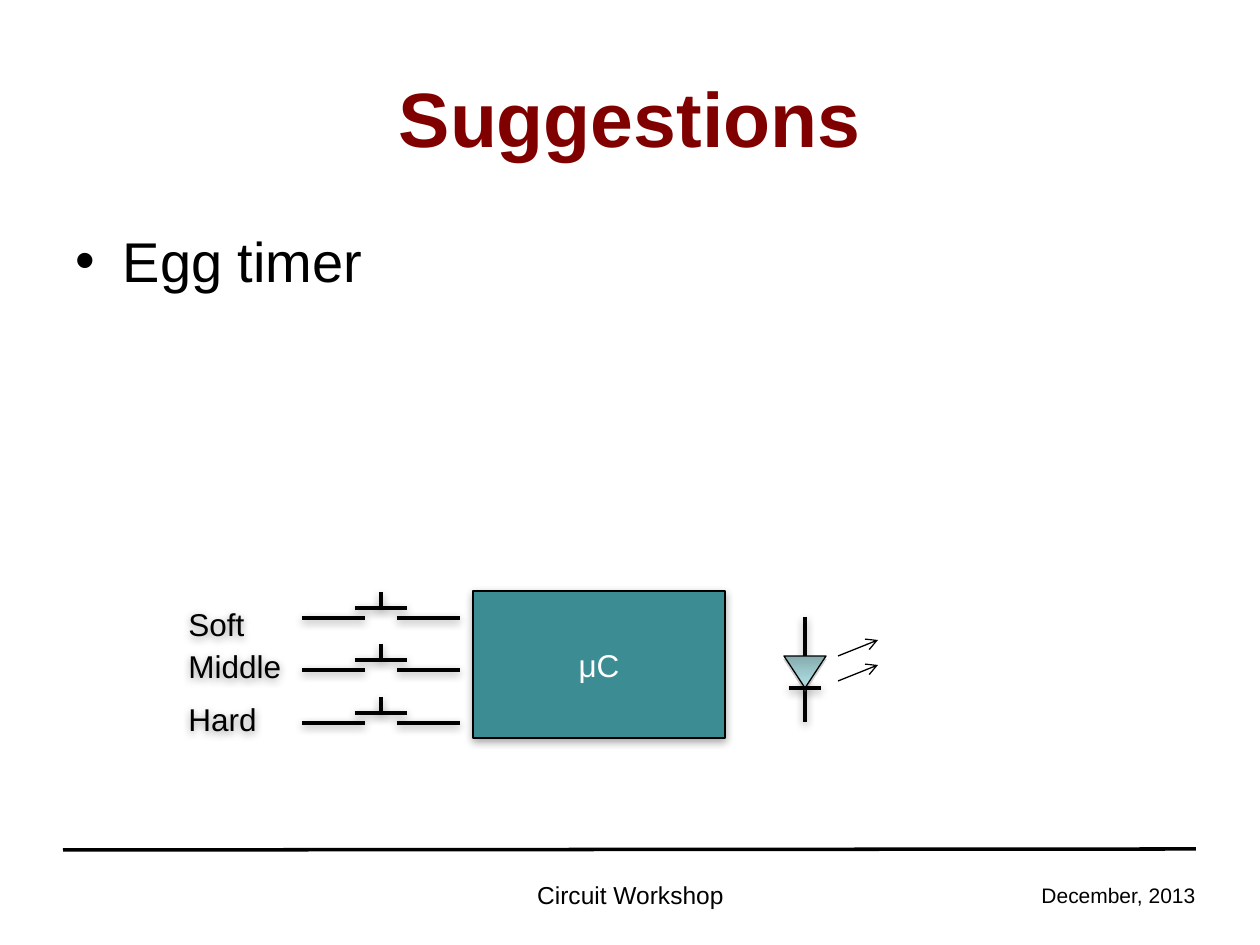
from pptx import Presentation
from pptx import util as u
from pptx.dml.color import RGBColor
from pptx.enum import shapes, text
from pptx.oxml import parse_xml
from pptx.oxml.ns import nsdecls, qn

PX = 914400 / 126
COLORS = {
    "ink": "000000",
    "title": "800000",
    "chip": "3C8C93",
    "white": "FFFFFF",
    "diode_light": "AFE0E4",
    "diode_dark": "85AAAD",
    "diode_shadow": "808080",
}
RGB = {name: RGBColor.from_string(value) for name, value in COLORS.items()}


def set_effects(item, color=None, alpha=38, blur=5, distance=1.6):
    properties = item._element.spPr
    for effects in properties.findall(qn("a:effectLst")):
        properties.remove(effects)
    shadow = "" if color is None else (
        f'<a:outerShdw blurRad="{u.Pt(blur)}" dist="{u.Pt(distance)}" dir="5400000" rotWithShape="0">'
        f'<a:srgbClr val="{COLORS[color]}"><a:alpha val="{alpha * 1000}"/></a:srgbClr></a:outerShdw>'
    )
    properties.append(parse_xml(f'<a:effectLst {nsdecls("a")}>{shadow}</a:effectLst>'))


def add_line(parent, ends, width=2, shadow="ink"):
    line = parent.shapes.add_connector(
        shapes.MSO_CONNECTOR.STRAIGHT, *[round(value * PX) for value in ends])
    line.line.color.rgb = RGB["ink"]
    line.line.width = u.Pt(width)
    set_effects(line, shadow)
    return line


deck = Presentation()
deck.slide_width, deck.slide_height = u.Inches(10), u.Inches(7.5)
page = deck.slides.add_slide(deck.slide_layouts[1])
title, body = page.shapes.title, page.placeholders[1]

add_line(page, (63, 850, 1196, 849), shadow=None)
date = page.shapes.add_textbox(0, 0, 0, 0)
footer = page.shapes.add_textbox(0, 0, 0, 0)
chip = page.shapes.add_shape(shapes.MSO_SHAPE.RECTANGLE, 0, 0, 0, 0)
chip.fill.solid()
chip.fill.fore_color.rgb = RGB["chip"]
chip.line.color.rgb = RGB["ink"]
chip.line.width = u.Pt(0.75)
set_effects(chip, "ink", 35, 5, 1.8)

diode = page.shapes.add_group_shape()
add_line(diode, (805, 617, 805, 722))
triangle = diode.shapes.add_shape(
    shapes.MSO_SHAPE.ISOSCELES_TRIANGLE, *[round(value * PX) for value in (784, 656, 42, 32)])
triangle.rotation = 180
triangle.fill.gradient()
triangle.fill.gradient_angle = 270
for stop, position, color in zip(triangle.fill.gradient_stops, (0.1, 1), ("diode_light", "diode_dark")):
    stop.position = position
    stop.color.rgb = RGB[color]
triangle.line.color.rgb = RGB["ink"]
triangle.line.width = u.Pt(0.75)
set_effects(triangle, "diode_shadow", 35, 0, 1.8)
add_line(diode, (789, 688, 821, 688))
for y in (656, 681):
    ray = add_line(diode, (838, y, 878, y - 16), 0.75, None)
    outline = ray._element.spPr.find(qn("a:ln"))
    outline.append(parse_xml(f'<a:tailEnd {nsdecls("a")} type="arrow"/>'))

switches = page.shapes.add_group_shape()
labels = []
for name, y, label_y in (("Soft", 618, 597), ("Middle", 670, 639), ("Hard", 723, 692)):
    add_line(switches, (302, y, 365, y))
    add_line(switches, (397, y, 460, y))
    add_line(switches, (381, y - 10, 381, y - 26))
    add_line(switches, (355, y - 10, 407, y - 10))
    label = switches.shapes.add_textbox(0, 0, 0, 0)
    set_effects(label, "ink")
    labels.append((label, name, (176, label_y, 126, 53), 18, "ink", "LEFT", "MIDDLE"))

for box, words, place, size, color, align, anchor in [
    (title, "Suggestions", (63, 38, 1134, 158), 44, "title", "CENTER", "MIDDLE"),
    (body, "Egg timer", (63, 220, 1134, 624), 32, "ink", "LEFT", "TOP"),
    (date, "December, 2013", (840, 876, 368, 38), 12, "ink", "RIGHT", "TOP"),
    (footer, "Circuit Workshop", (431, 862, 399, 66), 14, "ink", "CENTER", "MIDDLE"),
    (chip, "μC", (473, 591, 252, 147), 18, "white", "CENTER", "MIDDLE"),
    *labels,
]:
    box.left, box.top, box.width, box.height = [round(value * PX) for value in place]
    frame = box.text_frame
    frame.text = words
    frame.word_wrap = True
    frame.vertical_anchor = text.MSO_ANCHOR[anchor]
    para = frame.paragraphs[0]
    para.alignment = text.PP_ALIGN[align]
    para.font.name = "Arial"
    para.font.size = u.Pt(size)
    para.font.bold = box is title
    para.font.color.rgb = RGB[color]

deck.save("out.pptx")
